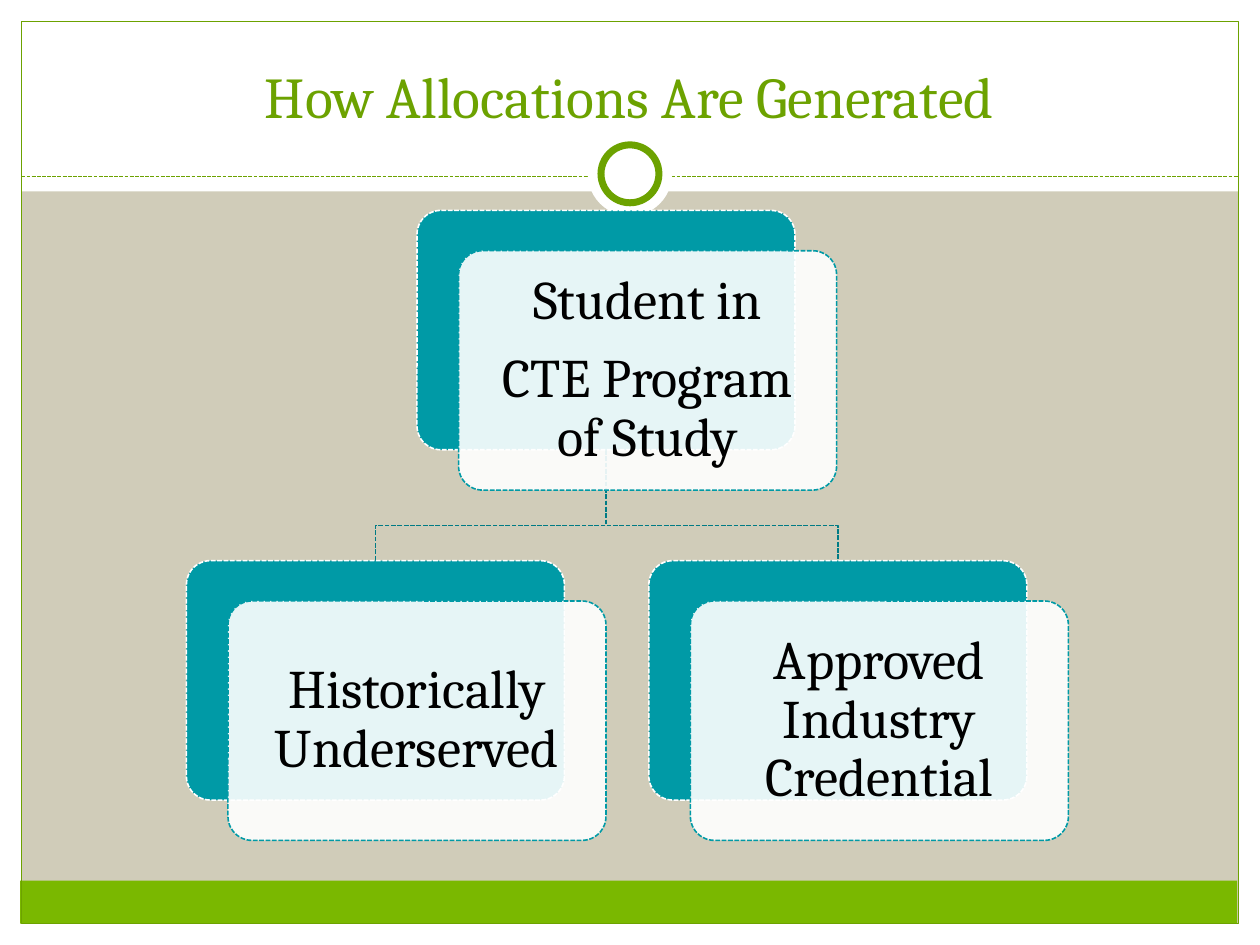
from lxml import etree
from pptx import Presentation
from pptx.dml.color import RGBColor
from pptx.enum.dml import MSO_LINE
from pptx.enum.shapes import MSO_CONNECTOR, MSO_SHAPE
from pptx.enum.text import MSO_ANCHOR, PP_ALIGN
from pptx.oxml.ns import qn
from pptx.util import Inches, Pt

RECT, ROUNDED, OVAL = MSO_SHAPE.RECTANGLE, MSO_SHAPE.ROUNDED_RECTANGLE, MSO_SHAPE.OVAL
DASH = MSO_LINE.SQUARE_DOT
CENTER, MIDDLE, BOTTOM = PP_ALIGN.CENTER, MSO_ANCHOR.MIDDLE, MSO_ANCHOR.BOTTOM
FONT = "Cambria"
COLORS = {
    "background": "D0CCB9", "white": "FFFFFF", "footer": "7AB800", "green": "6CA200",
    "teal": "009AA6", "branch": "007B85", "text": "000000",
}


def style(shape, fill=None, line=None, width=0.75, dash=None):
    shape.shadow.inherit = False
    if fill:
        shape.fill.solid()
        shape.fill.fore_color.rgb = RGBColor.from_string(COLORS[fill])
    else:
        shape.fill.background()
    if line:
        shape.line.color.rgb = RGBColor.from_string(COLORS[line])
        shape.line.width = Pt(width)
        if dash:
            shape.line.dash_style = dash
    else:
        shape.line.fill.background()


def write(paragraph, text, size, color):
    paragraph.alignment = CENTER
    run = paragraph.add_run()
    run.text = text
    run.font.name = FONT
    run.font.size = Pt(size)
    run.font.color.rgb = RGBColor.from_string(COLORS[color])


prs = Presentation()
prs.slide_width, prs.slide_height = Inches(10), Inches(7.5)
slide = prs.slides.add_slide(prs.slide_layouts[5])
slide.background.fill.solid()
slide.background.fill.fore_color.rgb = RGBColor.from_string(COLORS["background"])
shapes = slide.shapes

for left, top, width, height, fill, line in [
    (0, 7.33, 10, 0.17, "white", None),
    (0, 0, 10, 1.52, "white", None),
    (0, 0, 0.17, 7.5, "white", None),
    (9.83, 0, 0.17, 7.5, "white", None),
    (0.16, 6.99, 9.66, 0.34, "footer", None),
    (0.17, 0.17, 9.66, 7.16, None, "green"),
]:
    band = shapes.add_shape(RECT, Inches(left), Inches(top), Inches(width), Inches(height))
    style(band, fill, line)

divider = shapes.add_connector(
    MSO_CONNECTOR.STRAIGHT, Inches(0.17), Inches(1.4), Inches(9.83), Inches(1.4))
divider.line.color.rgb = RGBColor.from_string(COLORS["green"])
divider.line.width = Pt(0.75)
divider.line.dash_style = DASH
etree.SubElement(divider._element.spPr, qn("a:effectLst"))

for diameter, line in [(0.67, None), (0.46, "green")]:
    ring = shapes.add_shape(
        OVAL, Inches(5 - diameter / 2), Inches(1.38 - diameter / 2),
        Inches(diameter), Inches(diameter))
    style(ring, "white", line, 4)

title = shapes.title
title.left, title.top, title.width, title.height = (
    Inches(0.33), Inches(0.25), Inches(9.33), Inches(0.83))
title.text_frame.vertical_anchor = BOTTOM
write(title.text_frame.paragraphs[0], "How Allocations Are Generated", 33, "green")
shapes._spTree.append(title._element)

CARD_W, CARD_H = 3, 1.9
OFFSET_X, OFFSET_Y = 0.33, 0.32
ROOT_X, ROOT_Y = 3.31, 1.67
CHILD_Y = 4.45
CHILD_XS = (1.48, 5.15)
trunk_x = ROOT_X + CARD_W / 2

for child_x in reversed(CHILD_XS):
    child_center = child_x + CARD_W / 2
    branch = shapes.build_freeform(Inches(trunk_x), Inches(ROOT_Y + CARD_H))
    branch.add_line_segments(
        [(Inches(x), Inches(y)) for x, y in
         [(trunk_x, 4.17), (child_center, 4.17), (child_center, CHILD_Y)]],
        close=False)
    style(branch.convert_to_shape(), None, "branch", 0.9, DASH)

for card_x, card_y, lines in [
    (ROOT_X, ROOT_Y, ["Student in", "CTE Program of Study"]),
    (CHILD_XS[0], CHILD_Y, ["Historically Underserved"]),
    (CHILD_XS[1], CHILD_Y, ["Approved Industry Credential"]),
]:
    backing = shapes.add_shape(
        ROUNDED, Inches(card_x), Inches(card_y), Inches(CARD_W), Inches(CARD_H))
    backing.adjustments[0] = 0.1
    style(backing, "teal", "white", 0.9, DASH)

    card = shapes.add_shape(
        ROUNDED, Inches(card_x + OFFSET_X), Inches(card_y + OFFSET_Y),
        Inches(CARD_W), Inches(CARD_H))
    card.adjustments[0] = 0.1
    style(card, "white", "teal", 0.9, DASH)
    fill_color = card._element.spPr.find(qn("a:solidFill"))[0]
    etree.SubElement(fill_color, qn("a:alpha"), val="90000")

    frame = card.text_frame
    frame.word_wrap = True
    frame.vertical_anchor = MIDDLE
    frame.margin_left = frame.margin_right = Inches(0.13)
    frame.margin_top = frame.margin_bottom = Inches(0.13)
    for index, text in enumerate(lines):
        paragraph = frame.add_paragraph() if index else frame.paragraphs[0]
        paragraph.line_spacing = 0.9
        paragraph.space_after = Pt(11)
        write(paragraph, text, 31, "text")

prs.save("out.pptx")
